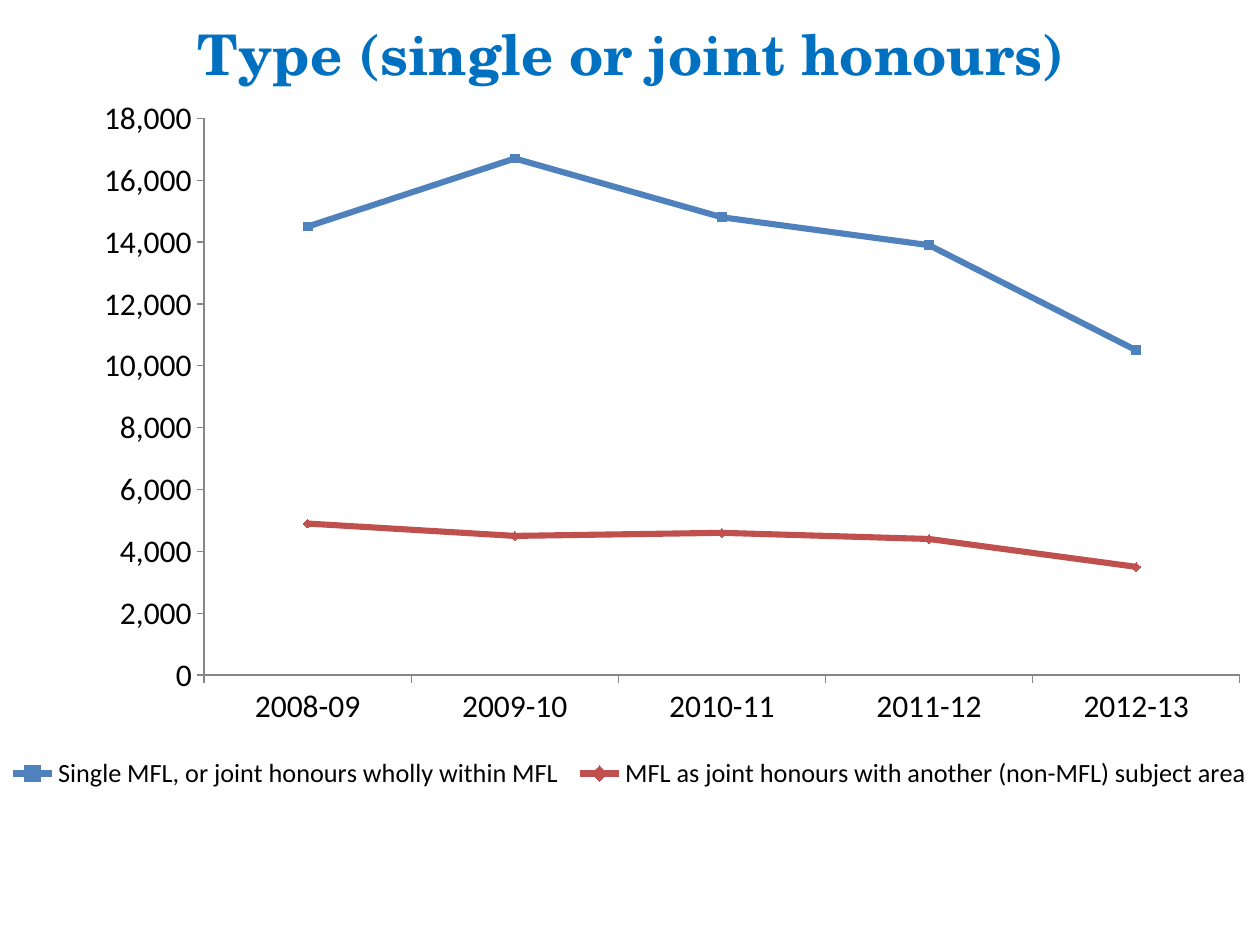
from lxml.etree import SubElement
from pptx import Presentation
from pptx.chart.data import CategoryChartData
from pptx.dml.color import RGBColor
from pptx.enum.chart import (
    XL_CHART_TYPE as ChartType,
    XL_LEGEND_POSITION as LegendPosition,
    XL_MARKER_STYLE as Marker,
    XL_TICK_MARK as TickMark,
)
from pptx.enum.text import MSO_ANCHOR as Anchor, PP_ALIGN as Align
from pptx.oxml.ns import qn
from pptx.util import Inches, Pt

# Content
TITLE = "Type (single or joint honours)"
YEARS = ["2008-09", "2009-10", "2010-11", "2011-12", "2012-13"]
SERIES = [
    ("Single MFL, or joint honours wholly within MFL",
     [14500, 16700, 14800, 13900, 10500], "single", Marker.SQUARE),
    ("MFL as joint honours with another (non-MFL) subject area",
     [4900, 4500, 4600, 4400, 3500], "joint", Marker.DIAMOND),
]

# Style
COLOURS = {"title": "0070C0", "text": "000000", "axis": "868686",
           "single": "4F81BD", "joint": "C0504D"}
TITLE_FONT, CHART_FONT = "TeX Gyre Schola", "Calibri"
WIDTH, HEIGHT = Inches(10), Inches(7.5)

# Chart size, and the places of its parts inside it, in inches
CHART_W, CHART_H = 9.99, 5.59
PLOT_BOX = (1.62, 0.18, 8.22, 4.42)
LEGEND_BOX = (0, 5.18, 9.99, 0.4)


def colour(name):
    return RGBColor.from_string(COLOURS[name])


def style_font(font, face, size, name):
    font.name, font.size = face, Pt(size)
    font.color.rgb = colour(name)


def place(part, box, index, settings):
    """Fix a chart part's box as shares of the chart's size."""
    for old in part.findall(qn("c:layout")):
        part.remove(old)
    layout = SubElement(part, qn("c:layout"))
    part.insert(index, layout)
    manual = SubElement(layout, qn("c:manualLayout"))
    shares = [length / whole for length, whole in zip(box, (CHART_W, CHART_H) * 2)]
    modes = [("xMode", "edge"), ("yMode", "edge")]
    for tag, value in settings + modes + list(zip("xywh", shares)):
        SubElement(manual, qn(f"c:{tag}")).set("val", str(value))


prs = Presentation()
prs.slide_width, prs.slide_height = WIDTH, HEIGHT
slide = prs.slides.add_slide(prs.slide_layouts[5])

# Title
heading = slide.shapes.title
heading.left, heading.top = Inches(0.51), 0
heading.width, heading.height = int(WIDTH * 0.9), Inches(0.84)
heading.text_frame.vertical_anchor = Anchor.MIDDLE
line = heading.text_frame.paragraphs[0]
line.alignment = Align.CENTER
run = line.add_run()
run.text = TITLE
run.font.bold = True
style_font(run.font, TITLE_FONT, 32, "title")

# Line chart of student numbers
numbers = CategoryChartData(number_format="#,##0")
numbers.categories = YEARS
for label, values, _, _ in SERIES:
    numbers.add_series(label, values)
chart = slide.shapes.add_chart(
    ChartType.LINE_MARKERS, 0, Inches(0.76), Inches(CHART_W), Inches(CHART_H), numbers
).chart
chart.has_title = False
style_font(chart.font, CHART_FONT, 18, "text")

# Lines and markers
chart.plots[0].vary_by_categories = False
for series, (_, _, name, marker) in zip(chart.plots[0].series, SERIES):
    series.smooth = False
    series.format.line.width = Pt(3.5)
    series.format.line.color.rgb = colour(name)
    series.marker.style, series.marker.size = marker, 5
    series.marker.format.fill.solid()
    series.marker.format.fill.fore_color.rgb = colour(name)
    series.marker.format.line.color.rgb = colour(name)

# Axes
for axis in (chart.category_axis, chart.value_axis):
    axis.has_major_gridlines = False
    axis.major_tick_mark, axis.minor_tick_mark = TickMark.OUTSIDE, TickMark.NONE
    axis.format.line.color.rgb = colour("axis")
    axis.format.line.width = Pt(0.75)
student_axis = chart.value_axis
student_axis.minimum_scale, student_axis.maximum_scale = 0, 18000
student_axis.major_unit = 2000
student_axis.tick_labels.number_format = "#,##0"
student_axis.tick_labels.number_format_is_linked = False

# Legend on one row below the plot
chart.has_legend = True
chart.legend.position = LegendPosition.BOTTOM
chart.legend.include_in_layout = False
style_font(chart.legend.font, CHART_FONT, 15, "text")

# Places of the plot and the legend
chart_xml = chart._chartSpace.chart
place(chart_xml.plotArea, PLOT_BOX, 0, [("layoutTarget", "inner")])
place(chart_xml.find(qn("c:legend")), LEGEND_BOX, 1, [])

prs.save("out.pptx")
